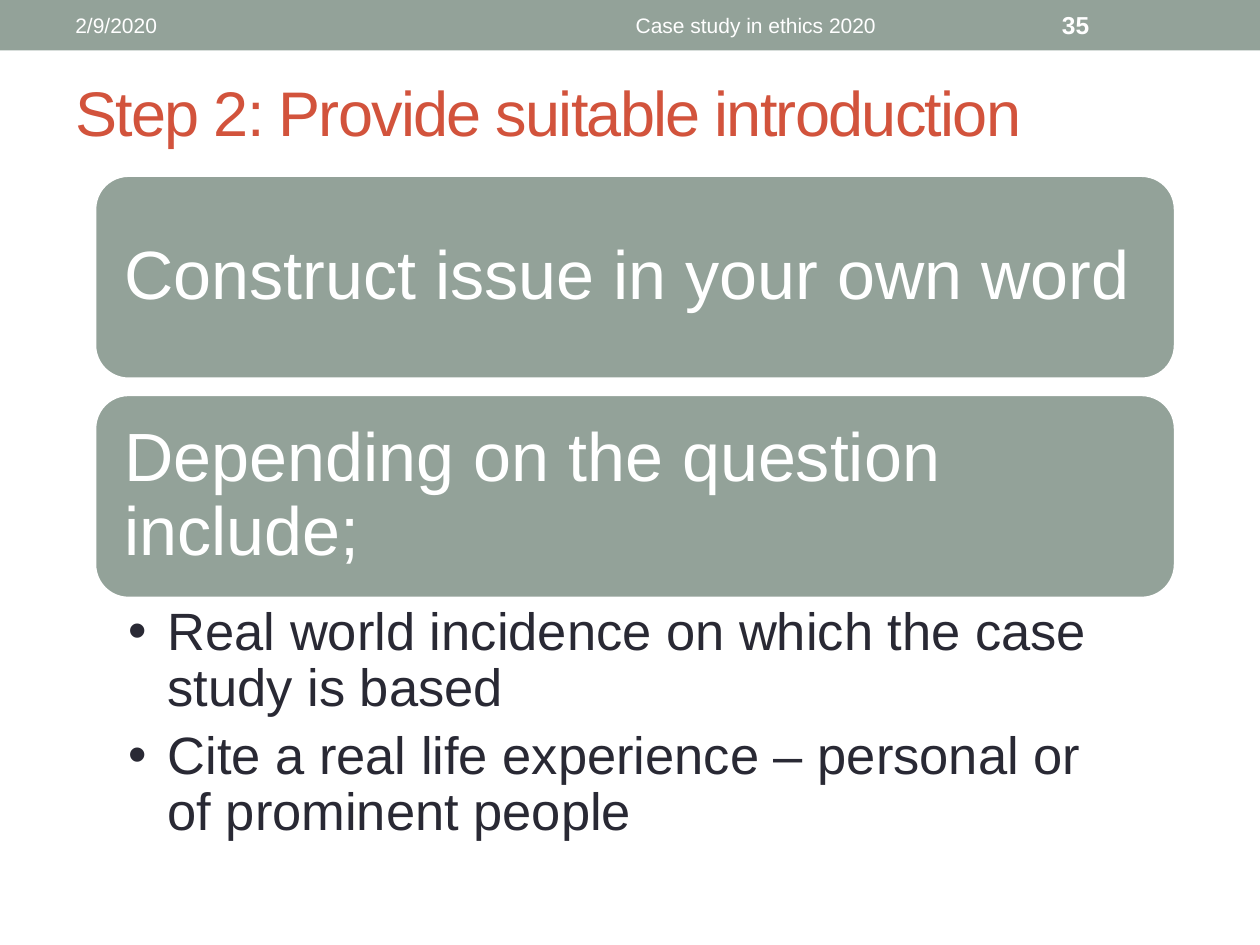
from lxml.etree import SubElement
from pptx import Presentation
from pptx.dml.color import RGBColor
from pptx.enum.shapes import MSO_SHAPE
from pptx.enum.text import MSO_ANCHOR, MSO_AUTO_SIZE, PP_ALIGN
from pptx.oxml.ns import qn
from pptx.util import Inches, Pt

SAGE = RGBColor(0x93, 0xA2, 0x99)
RUST = RGBColor(0xD2, 0x53, 0x3C)
INK = RGBColor(0x29, 0x29, 0x34)
WHITE = RGBColor(0xFF, 0xFF, 0xFF)

STEPS = ["Construct issue in your own word", "Depending on the question include;"]
EXAMPLES = [
    "Real world incidence on which the case study is based",
    "Cite a real life experience – personal or of prominent people",
]


def place(element, left, top, width, height):
    element.left, element.top = Inches(left), Inches(top)
    element.width, element.height = Inches(width), Inches(height)


def prepare_frame(frame, anchor, insets=(0.1, 0.05, 0.1, 0.05)):
    frame.word_wrap = True
    frame.auto_size = MSO_AUTO_SIZE.NONE
    frame.vertical_anchor = anchor
    (frame.margin_left, frame.margin_top,
     frame.margin_right, frame.margin_bottom) = map(Inches, insets)


def add_run(paragraph, text, size, color, bold=False):
    run = paragraph.add_run()
    run.text = text
    run.font.name = "Arial"
    run.font.size = Pt(size)
    run.font.color.rgb = color
    run.font.bold = bold
    return run


def add_panel(slide, preset, left, top, width, height):
    panel = slide.shapes.add_shape(
        preset, Inches(left), Inches(top), Inches(width), Inches(height))
    panel.shadow.inherit = False
    panel.fill.solid()
    panel.fill.fore_color.rgb = SAGE
    panel.line.fill.background()
    return panel


def add_header_text(slide, text, left, width, size=12, align=PP_ALIGN.LEFT, bold=False):
    header = slide.shapes.add_textbox(
        Inches(left), Inches(0.02), Inches(width), Inches(0.36))
    prepare_frame(header.text_frame, MSO_ANCHOR.MIDDLE)
    paragraph = header.text_frame.paragraphs[0]
    paragraph.alignment = align
    add_run(paragraph, text, size, WHITE, bold)


def fill_title(title, text):
    place(title, 0.5, 0.58, 9, 1.08)
    prepare_frame(title.text_frame, MSO_ANCHOR.TOP, (0.1, 0, 0.1, 0))
    paragraph = title.text_frame.paragraphs[0]
    paragraph.alignment = PP_ALIGN.LEFT
    run = add_run(paragraph, text, 36, RUST)
    run.font._element.set("spc", "-100")


def add_step(slide, text, top):
    step = add_panel(slide, MSO_SHAPE.ROUNDED_RECTANGLE, 0.75, top, 8.58, 1.62)
    step.line.color.rgb = WHITE
    step.line.width = Pt(2.08)
    prepare_frame(step.text_frame, MSO_ANCHOR.MIDDLE, (0.16,) * 4)
    paragraph = step.text_frame.paragraphs[0]
    paragraph.alignment = PP_ALIGN.LEFT
    paragraph.line_spacing = 0.9
    add_run(paragraph, text, 39, WHITE)


def fill_bullets(body, items):
    place(body, 0.75, 4.75, 8.58, 1.94)
    frame = body.text_frame
    prepare_frame(frame, MSO_ANCHOR.TOP, (0.27, 0.05, 0.3, 0.05))
    for index, item in enumerate(items):
        paragraph = frame.add_paragraph() if index else frame.paragraphs[0]
        paragraph.level = 1
        paragraph.line_spacing = 0.9
        paragraph.space_before = Pt(0)
        paragraph.space_after = Pt(6)
        properties = paragraph._p.get_or_add_pPr()
        properties.set("marL", str(Inches(0.31)))
        properties.set("indent", str(Inches(-0.31)))
        SubElement(properties, qn("a:buFont"), typeface="Arial")
        SubElement(properties, qn("a:buChar"), char="•")
        add_run(paragraph, item, 30, INK)


def main():
    presentation = Presentation()
    presentation.slide_width, presentation.slide_height = Inches(10), Inches(7.5)
    slide = presentation.slides.add_slide(presentation.slide_layouts[1])

    add_panel(slide, MSO_SHAPE.RECTANGLE, 0, 0, 10, 0.4)
    fill_title(slide.shapes.title, "Step 2: Provide suitable introduction")
    for index, step in enumerate(STEPS):
        add_step(slide, step, 1.39 + index * 1.74)
    fill_bullets(slide.placeholders[1], EXAMPLES)

    add_header_text(slide, "2/9/2020", 0.5, 3.17)
    add_header_text(slide, "Case study in ethics 2020", 3.75, 4.5, align=PP_ALIGN.CENTER)
    add_header_text(slide, "35", 8.33, 1.17, size=14, bold=True)

    presentation.save("out.pptx")


if __name__ == "__main__":
    main()
